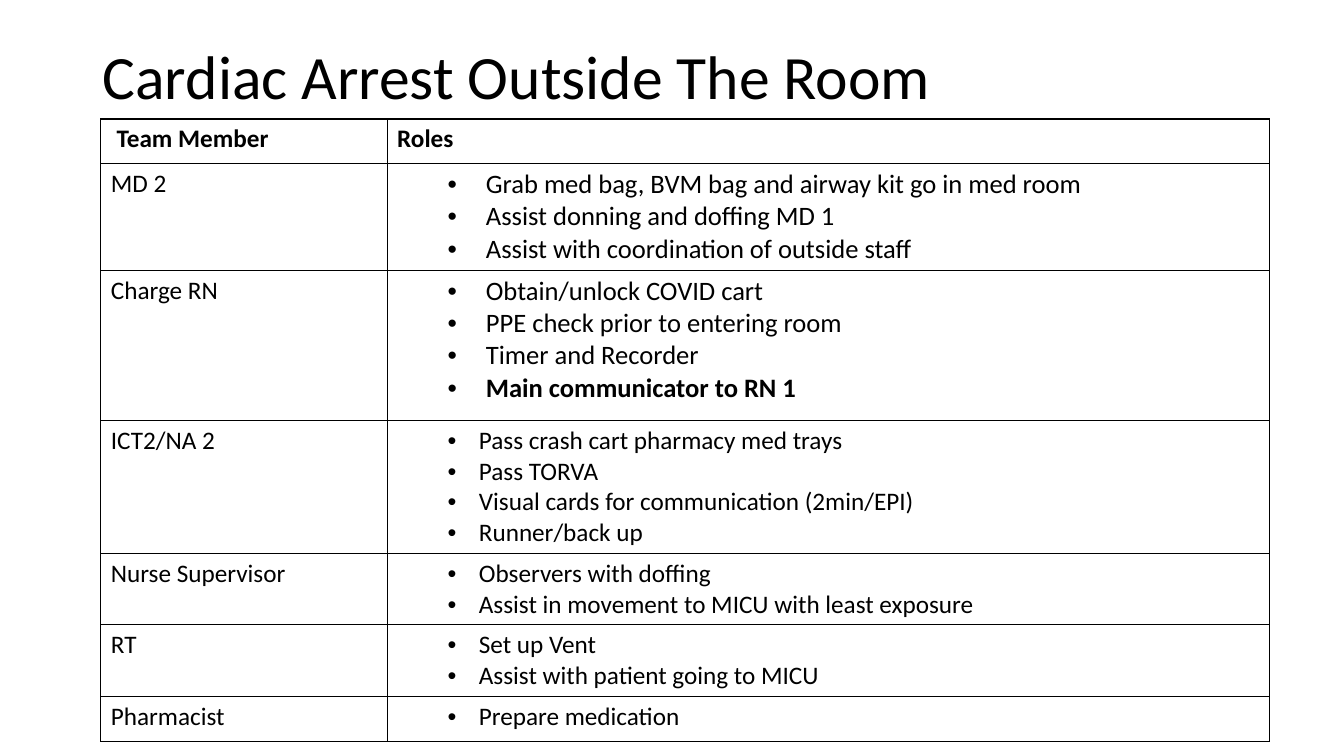
from dataclasses import dataclass

from lxml import etree
from pptx import Presentation
from pptx.dml.color import RGBColor
from pptx.enum.text import MSO_ANCHOR
from pptx.oxml.ns import qn
from pptx.util import Inches, Pt

MIDDLE = MSO_ANCHOR.MIDDLE


@dataclass(frozen=True)
class Theme:
    """Colours, font and type sizes of the slide."""
    font: str = "Calibri"
    ink: str = "000000"
    paper: str = "FFFFFF"
    title: int = 44
    body: int = 18
    large: int = 19
    border: int = 1


THEME = Theme()
TITLE = "Cardiac Arrest Outside The Room"
TITLE_BOX = (0.92, 0.06, 11.5, 1.45)
TABLE_BOX = (1, 1.18, 11.59, 6.18)
COLUMN_WIDTHS = (2.84, 8.75)
HEADINGS = (" Team Member", "Roles")
BULLET_START = 0.5
HANGING = {THEME.large: 0.38, THEME.body: 0.31}
EMPHASIS = "Main communicator to RN 1"
TEAM = (
    ("MD 2", 1.06, THEME.large, (
        "Grab med bag, BVM bag and airway kit go in med room",
        "Assist donning and doffing MD 1",
        "Assist with coordination of outside staff")),
    ("Charge RN", 1.49, THEME.large, (
        "Obtain/unlock COVID cart",
        "PPE check prior to entering room",
        "Timer and Recorder",
        EMPHASIS)),
    ("ICT2/NA 2", 1.32, THEME.body, (
        "Pass crash cart pharmacy med trays",
        "Pass TORVA",
        "Visual cards for communication (2min/EPI)",
        "Runner/back up")),
    ("Nurse Supervisor", 0.71, THEME.body, (
        "Observers with doffing",
        "Assist in movement to MICU with least exposure")),
    ("RT", 0.71, THEME.body, (
        "Set up Vent",
        "Assist with patient going to MICU")),
    ("Pharmacist", 0.45, THEME.body, ("Prepare medication",)),
)
HEADER_HEIGHT = 0.44


def write(paragraph, text, size, bold=False):
    """Add one formatted run to a paragraph."""
    run = paragraph.add_run()
    run.text = text
    formats = {"name": THEME.font, "size": Pt(size), "bold": bold}
    for name, value in formats.items():
        setattr(run.font, name, value)
    run.font.color.rgb = RGBColor.from_string(THEME.ink)


def add_bullet(paragraph, hanging):
    """Give a paragraph a bullet with a hanging indent."""
    paragraph.level = 1
    properties = paragraph._p.get_or_add_pPr()
    properties.set("marL", str(Inches(BULLET_START + hanging)))
    properties.set("indent", str(-Inches(hanging)))
    etree.SubElement(properties, qn("a:buFont"), typeface="Arial")
    etree.SubElement(properties, qn("a:buChar"), char="•")


def style_cell(cell):
    """Draw the four borders of a cell and fill it."""
    properties = cell._tc.get_or_add_tcPr()
    for side in ("lnL", "lnR", "lnT", "lnB"):
        line = etree.SubElement(properties, qn(f"a:{side}"), w=str(Pt(THEME.border)))
        fill = etree.SubElement(line, qn("a:solidFill"))
        etree.SubElement(fill, qn("a:srgbClr"), val=THEME.ink)
    cell.fill.solid()
    cell.fill.fore_color.rgb = RGBColor.from_string(THEME.paper)


def write_roles(cell, roles, size):
    """List the roles of a team member as bullets."""
    frame = cell.text_frame
    for index, role in enumerate(roles):
        paragraph = frame.add_paragraph() if index else frame.paragraphs[0]
        add_bullet(paragraph, HANGING[size])
        write(paragraph, role, size, bold=role == EMPHASIS)


def add_title(slide, box):
    """Place the title in its box."""
    frame = slide.shapes.add_textbox(*map(Inches, box)).text_frame
    for name, value in {"word_wrap": True, "vertical_anchor": MIDDLE}.items():
        setattr(frame, name, value)
    paragraph = frame.paragraphs[0]
    paragraph.line_spacing = 0.9
    write(paragraph, TITLE, THEME.title)


def add_team_table(slide, box):
    """Place the table of team members and their roles in its box."""
    shape = slide.shapes.add_table(
        len(TEAM) + 1, len(COLUMN_WIDTHS), *map(Inches, box))
    table = shape.table
    table.first_row = table.horz_banding = False
    for column, width in zip(table.columns, COLUMN_WIDTHS):
        column.width = Inches(width)
    table.rows[0].height = Inches(HEADER_HEIGHT)
    for index, heading in enumerate(HEADINGS):
        write(table.cell(0, index).text_frame.paragraphs[0], heading, THEME.body, bold=True)
    for index, (member, height, size, roles) in enumerate(TEAM, start=1):
        table.rows[index].height = Inches(height)
        write(table.cell(index, 0).text_frame.paragraphs[0], member, THEME.body)
        write_roles(table.cell(index, 1), roles, size)
    for cell in table.iter_cells():
        style_cell(cell)


def main():
    """Build the slide and save it."""
    presentation = Presentation()
    presentation.slide_width = Inches(13.33)
    presentation.slide_height = Inches(7.5)
    slide = presentation.slides.add_slide(presentation.slide_layouts[6])
    add_title(slide, TITLE_BOX)
    add_team_table(slide, TABLE_BOX)
    presentation.save("out.pptx")


if __name__ == "__main__":
    main()
